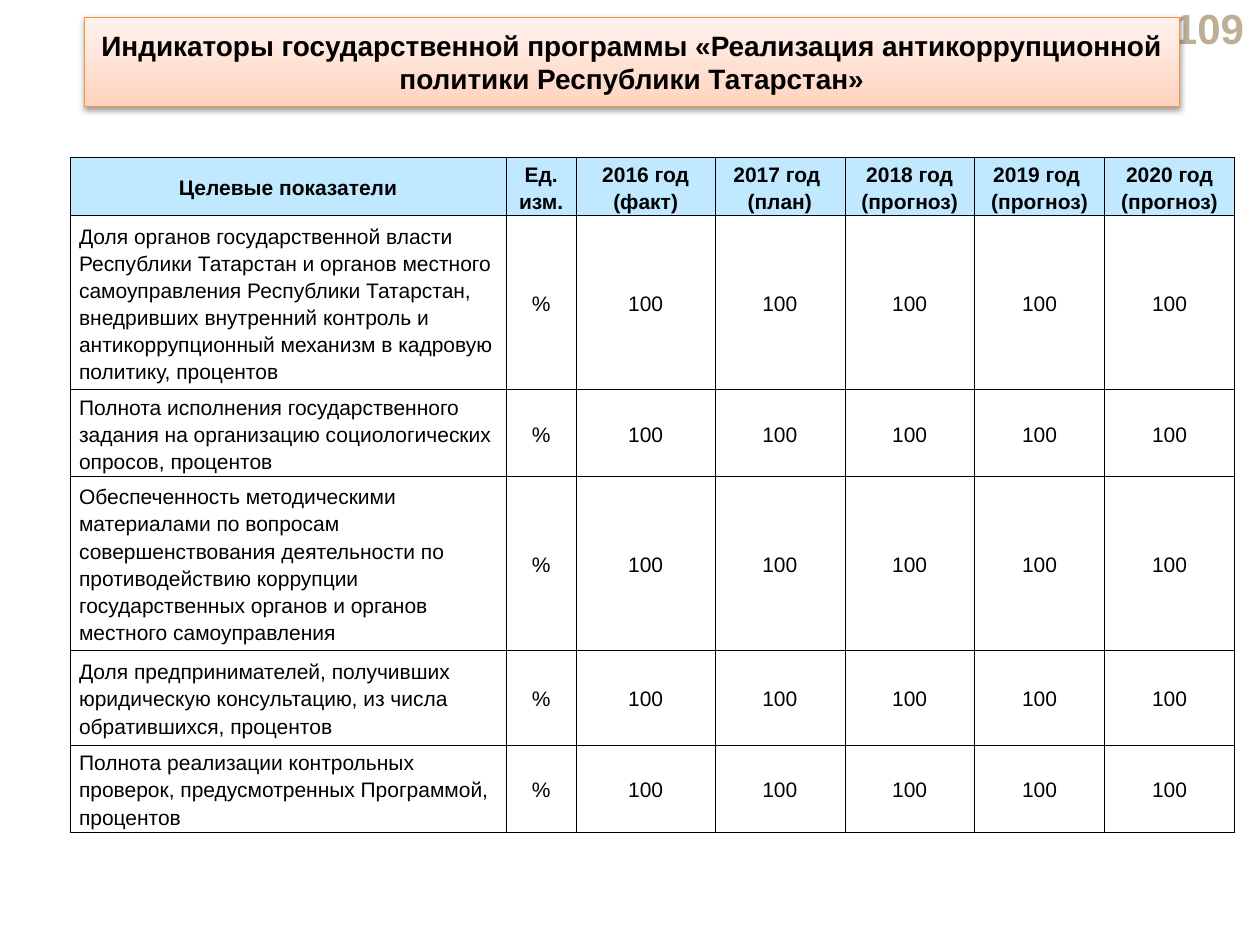
from lxml.etree import SubElement
from pptx import Presentation
from pptx.dml.color import RGBColor
from pptx.enum.text import MSO_ANCHOR, MSO_AUTO_SIZE, PP_ALIGN
from pptx.oxml import parse_xml
from pptx.oxml.ns import nsdecls, qn
from pptx.util import Pt

# Content
TITLE = ("Индикаторы государственной программы «Реализация антикоррупционной "
         "политики Республики Татарстан»")
PAGE = "109"
HEAD = ["Целевые показатели", "Ед.\nизм.", "2016 год\n(факт)", "2017 год \n(план)",
        "2018 год (прогноз)", "2019 год \n(прогноз)", "2020 год\n(прогноз)"]
GOALS = [
    "Доля органов государственной власти Республики Татарстан и органов местного "
    "самоуправления Республики Татарстан, внедривших внутренний контроль и "
    "антикоррупционный механизм в кадровую политику, процентов",
    "Полнота исполнения государственного задания на организацию социологических "
    "опросов, процентов",
    "Обеспеченность методическими материалами по вопросам совершенствования "
    "деятельности по противодействию коррупции государственных органов и органов "
    "местного самоуправления",
    "Доля предпринимателей, получивших юридическую консультацию, из числа "
    "обратившихся, процентов",
    "Полнота реализации контрольных проверок, предусмотренных Программой, процентов",
]
ROWS = [HEAD] + [[goal, "%"] + ["100"] * 5 for goal in GOALS]

# Layout and style
COLS = [248.8, 40.5, 79] + [74.25] * 4
HIGH = [33.2, 99.4, 49.7, 99.4, 54.3, 49.7]
HEX = {"text": "000000", "page": "BFAE96", "head": "C0E9FF", "cell": "FFFFFF",
       "edge": "F69240", "rule": "000000"}
GRAD = [(0, "FFD2BD"), (35, "FFDED0"), (100, "FFF2ED")]
INSET = {"margin_left": Pt(5), "margin_right": Pt(5), "margin_top": 0,
         "margin_bottom": 0, "vertical_anchor": MSO_ANCHOR.MIDDLE}
FRAME = {"word_wrap": True, "auto_size": MSO_AUTO_SIZE.NONE,
         "vertical_anchor": MSO_ANCHOR.MIDDLE}


def apply(item, props):
    for name, value in props.items():
        setattr(item, name, value)


def write(frame, text, size, bold, align, color="text", space=None):
    line = frame.paragraphs[0]
    line.text = text
    apply(line, {"alignment": align, "line_spacing": space})
    for run in line.runs:
        apply(run.font, {"name": "Arial", "size": Pt(size), "bold": bold})
        run.font.color.rgb = RGBColor.from_string(HEX[color])
    for gap in line._p.findall(qn("a:br")):
        SubElement(gap, qn("a:rPr"), sz=str(size * 100))


def border(cell):
    props = cell._tc.get_or_add_tcPr()
    for spot, side in enumerate(("lnL", "lnR", "lnT", "lnB")):
        props.insert(spot, parse_xml(
            f'<a:{side} {nsdecls("a")} w="3175"><a:solidFill>'
            f'<a:srgbClr val="{HEX["rule"]}"/></a:solidFill></a:{side}>'))


def panel(shape):
    """Give the title its rounded outline, gradient, edge and shadow."""
    stops = "".join(f'<a:gs pos="{pos * 1000}"><a:srgbClr val="{color}"/></a:gs>'
                    for pos, color in GRAD)
    parts = parse_xml(f'''<a:parts {nsdecls("a")}>
        <a:prstGeom prst="roundRect"><a:avLst/></a:prstGeom>
        <a:gradFill rotWithShape="1"><a:gsLst>{stops}</a:gsLst>
          <a:lin ang="16200000" scaled="1"/></a:gradFill>
        <a:ln w="9525"><a:solidFill><a:srgbClr val="{HEX["edge"]}"/></a:solidFill></a:ln>
        <a:effectLst><a:outerShdw blurRad="39370" dist="20320" dir="5400000"
          rotWithShape="0"><a:srgbClr val="000000"><a:alpha val="38000"/></a:srgbClr>
        </a:outerShdw></a:effectLst></a:parts>''')
    for part in list(parts):
        shape._element.spPr.append(part)


deck = Presentation()
apply(deck, {"slide_width": Pt(720), "slide_height": Pt(540)})
slide = deck.slides.add_slide(deck.slide_layouts[5])
shapes = slide.shapes

# Page number
page = shapes.add_textbox(Pt(656), Pt(3.6), Pt(62), Pt(24.5))
apply(page.text_frame, FRAME)
write(page.text_frame, PAGE, 24, True, PP_ALIGN.RIGHT, "page")

# Table of indicators
table = shapes.add_table(len(ROWS), len(COLS), Pt(40.2), Pt(90),
                         Pt(sum(COLS)), Pt(sum(HIGH))).table
apply(table, {"first_row": False, "horz_banding": False})
for col, width in zip(table.columns, COLS):
    col.width = Pt(width)
for r, (row, high) in enumerate(zip(ROWS, HIGH)):
    table.rows[r].height = Pt(high)
    for c, text in enumerate(row):
        cell = table.cell(r, c)
        apply(cell, INSET)
        if r and c < 2:
            cell.fill.background()
        else:
            cell.fill.solid()
            cell.fill.fore_color.rgb = RGBColor.from_string(HEX["cell" if r else "head"])
        border(cell)
        align = PP_ALIGN.LEFT if r and c == 0 else PP_ALIGN.CENTER
        write(cell.text_frame, text, 12, r == 0, align, space=1.15)

# Title panel, in front of the page number
title = shapes.title
apply(title, {"left": Pt(48.2), "top": Pt(9.8), "width": Pt(625.7), "height": Pt(51.2)})
panel(title)
apply(title.text_frame, FRAME)
write(title.text_frame, TITLE, 16, True, PP_ALIGN.CENTER)
shapes._spTree.append(title._element)

deck.save("out.pptx")
